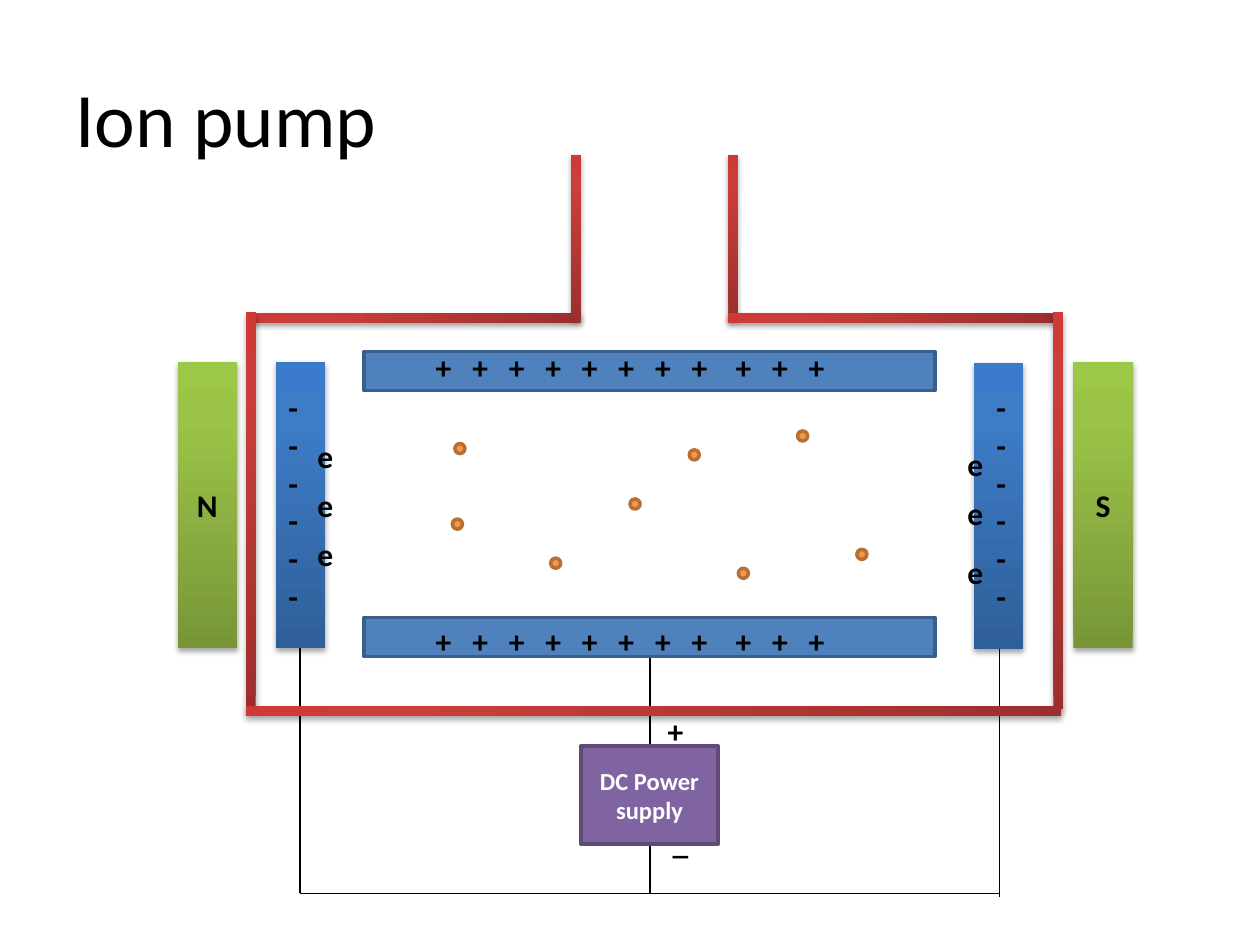
from lxml import etree
from pptx import Presentation
from pptx.dml.color import RGBColor
from pptx.enum import shapes, text
from pptx.oxml import parse_xml
from pptx.oxml.ns import nsdecls, qn
from pptx.util import Inches, Pt

COLOURS = {
    "ink": "000000", "white": "FFFFFF",
    "anode": "4F81BD", "anode_edge": "3A5F8C",
    "supply": "8064A2", "supply_edge": "5F4A78",
    "ion": "F79646", "ion_edge": "B76F34",
}
GRADIENTS = {
    "wall": ("9C2F2D", "CB3E3A", "CE3B37"),
    "cathode": ("2F5F99", "3D7CC7", "3A7CCB"),
    "magnet": ("779737", "9BC348", "9DC746"),
}
STOPS = (0, 80, 100)

TITLE = "Ion pump"
WIRES = [
    ((2.38, 5.12), (2.38, 7.09)),
    ((7.93, 5.15), (7.93, 7.12)),
    ((5.16, 5.21), (5.16, 7.09)),
    ((2.38, 7.09), (7.93, 7.09)),
]
WALL = 0.08
WALLS = [
    (4.53, 1.23, 1.3, 0), (5.78, 1.23, 1.3, 0),
    (7.04, 1.22, 2.6, 270), (3.27, 1.22, 2.6, 270),
    (1.95, 2.48, 3.15, 0), (8.36, 2.48, 3.15, 0),
    (5.15, 2.41, 6.47, 270),
]
ANODE_TOPS = (2.79, 4.9)
CATHODES = [(2.19, 2.87), (7.73, 2.88)]
MAGNETS = [("S", 8.52), ("N", 1.41)]
ELECTRONS = {2.42: (3.42, 3.81, 4.2), 7.58: (3.48, 3.87, 4.34)}
MINUS_COLUMNS = [(2.19, 0.31), (7.81, 0.47)]
MINUS_COUNT = 6
PLUS_TOPS = (2.71, 4.89)
PLUS_COUNT, PLUS_PITCH = 11, 0.29
WIDE_GAP_AT, WIDE_GAP = 8, 0.06
IONS = [
    (3.61, 3.52), (5, 3.96), (4.37, 4.43), (6.33, 3.42),
    (6.8, 4.36), (5.86, 4.51), (5.47, 3.57), (3.59, 4.12),
]
ION = 0.08
TERMINALS = [("+", 5.2, 5.6, 0.25), ("_", 5.24, 6.48, 0.33)]


def rgb(name):
    return RGBColor.from_string(COLOURS[name])


def write(box, content, size=18, bold=True, colour="ink", align=text.PP_ALIGN.LEFT,
          anchor=text.MSO_ANCHOR.TOP):
    frame = box.text_frame
    frame.word_wrap = True
    frame.vertical_anchor = anchor
    frame.text = content
    for para in frame.paragraphs:
        para.alignment = align
        for span in para.runs:
            span.font.name = "Calibri"
            span.font.size = Pt(size)
            span.font.bold = bold
            span.font.color.rgb = rgb(colour)


def label(parent, content, left, top, width=0.39, height=0.4):
    box = parent.add_textbox(*map(Inches, (left, top, width, height)))
    write(box, content)
    return box


def block(parent, place, fill, edge, kind=shapes.MSO_SHAPE.RECTANGLE):
    box = parent.add_shape(kind, *map(Inches, place))
    box.shadow.inherit = False
    box.fill.solid()
    box.fill.fore_color.rgb = rgb(fill)
    box.line.color.rgb = rgb(edge)
    box.line.width = Pt(2)
    return box


def shaded(parent, place, gradient):
    box = parent.add_shape(shapes.MSO_SHAPE.RECTANGLE, *map(Inches, place))
    box.line.fill.background()
    stops = "".join(
        f'<a:gs pos="{pos * 1000}"><a:srgbClr val="{value}"/></a:gs>'
        for pos, value in zip(STOPS, GRADIENTS[gradient])
    )
    fill = parse_xml(
        f'<a:gradFill {nsdecls("a")} rotWithShape="1"><a:gsLst>{stops}</a:gsLst>'
        '<a:lin ang="16200000" scaled="0"/></a:gradFill>'
    )
    shadow = parse_xml(
        f'<a:effectLst {nsdecls("a")}><a:outerShdw blurRad="{Pt(3.1)}" dist="{Pt(1.8)}" '
        'dir="5400000" rotWithShape="0"><a:srgbClr val="000000">'
        '<a:alpha val="35000"/></a:srgbClr></a:outerShdw></a:effectLst>'
    )
    properties = box.element.spPr
    properties.find(qn("a:prstGeom")).addnext(fill)
    properties.append(shadow)
    return box


def wire(parent, start, end):
    line = parent.add_connector(shapes.MSO_CONNECTOR.STRAIGHT, *map(Inches, start + end))
    line.line.color.rgb = rgb("ink")
    line.line.width = Pt(0.75)
    etree.SubElement(line.element.spPr, qn("a:effectLst"))


def plus_row(parent, top):
    box = label(parent, "\t".join("+" * PLUS_COUNT), 3.36, top, 3.52)
    tabs = etree.SubElement(box.text_frame.paragraphs[0]._p.get_or_add_pPr(), qn("a:tabLst"))
    for i in range(1, PLUS_COUNT):
        offset = i * PLUS_PITCH + (WIDE_GAP if i >= WIDE_GAP_AT else 0)
        etree.SubElement(tabs, qn("a:tab"), pos=str(Inches(offset)), algn="l")


def main():
    deck = Presentation()
    deck.slide_width, deck.slide_height = Inches(10), Inches(7.5)
    page = deck.slides.add_slide(deck.slide_layouts[5])
    canvas = page.shapes

    title = canvas.title
    title.left, title.top, title.width, title.height = map(Inches, (0.5, 0.3, 9, 1.25))
    write(title, TITLE, size=44, bold=False, anchor=text.MSO_ANCHOR.MIDDLE)

    for start, end in WIRES:
        wire(canvas, start, end)

    chamber = canvas.add_group_shape().shapes
    for left, top, length, rotation in WALLS:
        shaded(chamber, (left, top, WALL, length), "wall").rotation = rotation

    for top in ANODE_TOPS:
        block(canvas, (2.89, top, 4.53, 0.31), "anode", "anode_edge")
    for left, top in CATHODES:
        shaded(canvas, (left, top, 0.39, 2.27), "cathode")
    centred = {"align": text.PP_ALIGN.CENTER, "anchor": text.MSO_ANCHOR.MIDDLE}
    for pole, left in MAGNETS:
        write(shaded(canvas, (left, 2.87, 0.47, 2.27), "magnet"), pole, **centred)

    supply = block(canvas, (4.61, 5.92, 1.09, 0.78), "supply", "supply_edge")
    write(supply, "DC Power supply", size=14, colour="white", **centred)

    for left, tops in ELECTRONS.items():
        for top in tops:
            label(canvas, "e", left, top)
    for left, width in MINUS_COLUMNS:
        label(canvas, "\n".join("-" * MINUS_COUNT), left, 3.03, width, 1.92)
    charges = canvas.add_group_shape().shapes
    for top in PLUS_TOPS:
        plus_row(charges, top)
    for left, top in IONS:
        block(canvas, (left, top, ION, ION), "ion", "ion_edge", shapes.MSO_SHAPE.OVAL)
    for sign, left, top, width in TERMINALS:
        label(canvas, sign, left, top, width)

    deck.save("out.pptx")


if __name__ == "__main__":
    main()
